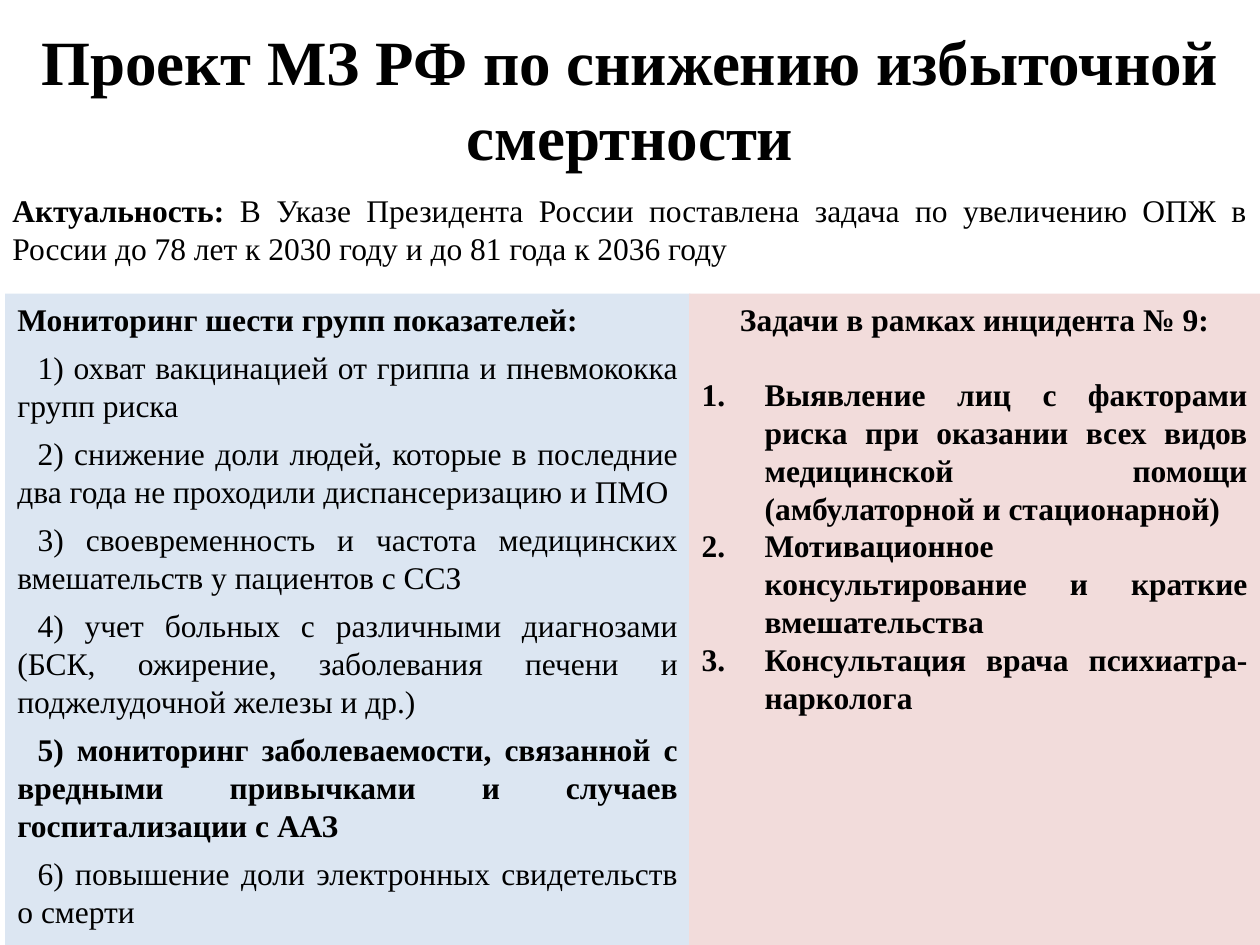
"""Build a slide on a health ministry project to reduce excess mortality."""
from lxml.etree import SubElement
from pptx import Presentation
from pptx.dml.color import RGBColor
from pptx.enum.shapes import MSO_SHAPE
from pptx.enum.text import MSO_ANCHOR, MSO_AUTO_SIZE, PP_ALIGN
from pptx.oxml.ns import qn
from pptx.util import Inches, Pt

BLACK = RGBColor(0, 0, 0)
BLUE = RGBColor(0xDC, 0xE6, 0xF2)
PINK = RGBColor(0xF2, 0xDC, 0xDB)
FONT = "Times New Roman"

TITLE = "Проект МЗ РФ по снижению избыточной смертности"
LEAD = "Актуальность:"
GOAL = (" В Указе Президента России поставлена задача по увеличению ОПЖ "
        "в России до 78 лет к 2030 году и до 81 года к 2036 году")
GROUPS = "Мониторинг шести групп показателей:"
ITEMS = [
    ("1) охват вакцинацией от гриппа и пневмококка групп риска", False),
    ("2) снижение доли людей, которые в последние два года не проходили "
     "диспансеризацию и ПМО", False),
    ("3) своевременность и частота медицинских вмешательств у пациентов с ССЗ",
     False),
    ("4) учет больных с различными диагнозами (БСК, ожирение, заболевания "
     "печени и поджелудочной железы и др.)", False),
    ("5) мониторинг заболеваемости, связанной с вредными привычками и случаев "
     "госпитализации с ААЗ", True),
    ("6) повышение доли электронных свидетельств о смерти", False),
]
TASKS = "Задачи в рамках инцидента № 9:"
STEPS = [
    "Выявление лиц с факторами риска при оказании всех видов медицинской "
    "помощи (амбулаторной и стационарной)",
    "Мотивационное консультирование и краткие вмешательства",
    "Консультация врача психиатра-нарколога",
]
WIDE, HIGH = 10, 7.5
TOP, EDGE, SPLIT = 2.33, 0.04, 5.47


def style(para, size=18, bold=False, align=PP_ALIGN.JUSTIFY):
    font = para.font
    font.name, font.size, font.bold = FONT, Pt(size), bold
    font.color.rgb = BLACK
    para.alignment = align


def write(frame, text, first=False, **look):
    para = frame.paragraphs[0] if first else frame.add_paragraph()
    para.text = text
    style(para, **look)
    return para


def indent(para, left, hang):
    props = para._p.get_or_add_pPr()
    props.set("marL", str(Inches(left)))
    props.set("indent", str(Inches(hang)))
    return props


def panel(slide, left, right, color):
    shape = slide.shapes.add_shape(
        MSO_SHAPE.RECTANGLE, Inches(left), Inches(TOP),
        Inches(right - left), Inches(HIGH - TOP))
    shape.shadow.inherit = False
    shape.fill.solid()
    shape.fill.fore_color.rgb = color
    shape.line.fill.background()
    frame = shape.text_frame
    frame.word_wrap = True
    frame.vertical_anchor = MSO_ANCHOR.TOP
    return frame


def main():
    deck = Presentation()
    deck.slide_width, deck.slide_height = Inches(WIDE), Inches(HIGH)
    slide = deck.slides.add_slide(deck.slide_layouts[5])

    title = slide.shapes.title
    title.left, title.top = Inches(0), Inches(0)
    title.width, title.height = Inches(WIDE), Inches(1.55)
    frame = title.text_frame
    frame.auto_size = MSO_AUTO_SIZE.NONE
    frame.vertical_anchor = MSO_ANCHOR.MIDDLE
    write(frame, TITLE, True, size=36, bold=True, align=PP_ALIGN.CENTER)

    box = slide.shapes.add_textbox(
        Inches(0), Inches(1.47), Inches(WIDE), Inches(0.71))
    box.text_frame.word_wrap = True
    para = box.text_frame.paragraphs[0]
    style(para)
    for text, bold in ((LEAD, True), (GOAL, False)):
        run = para.add_run()
        run.text = text
        run.font.bold = bold

    frame = panel(slide, EDGE, SPLIT + 0.01, BLUE)
    write(frame, GROUPS, True, bold=True)
    for text, bold in ITEMS:
        para = write(frame, text, bold=bold)
        para.space_before = Pt(6)
        indent(para, 0, 0.16)

    frame = panel(slide, SPLIT, WIDE, PINK)
    head = write(frame, TASKS, True, bold=True, align=PP_ALIGN.CENTER)
    head.space_after = Pt(21.5)
    for text in STEPS:
        props = indent(write(frame, text, bold=True), 0.5, -0.5)
        mark = SubElement(props, qn("a:buAutoNum"), type="arabicPeriod")
        props.insert_element_before(mark, "a:tabLst", "a:defRPr", "a:extLst")

    deck.save("out.pptx")


if __name__ == "__main__":
    main()
